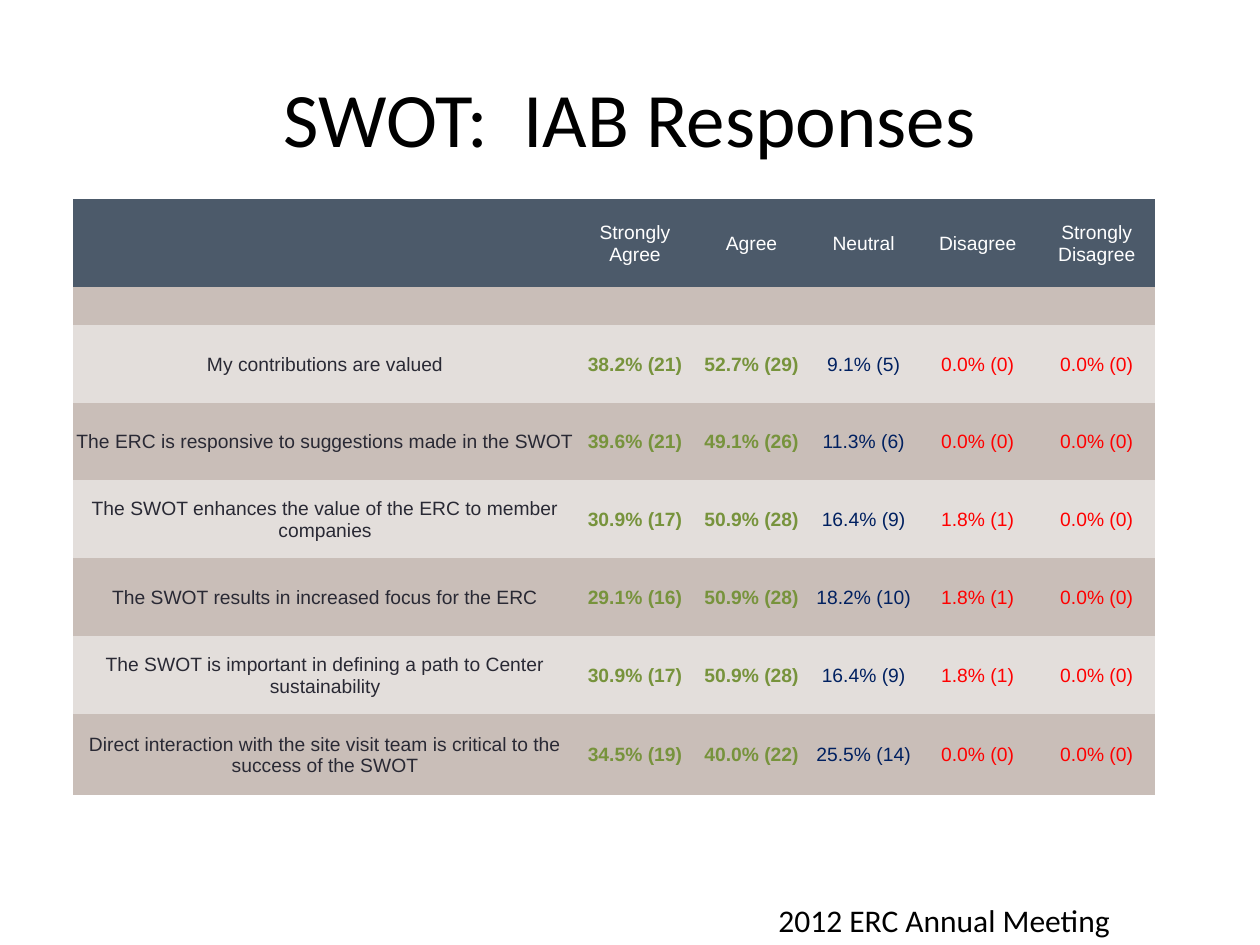
from dataclasses import dataclass

from pptx import Presentation
from pptx.dml.color import RGBColor
from pptx.enum.text import MSO_ANCHOR, MSO_AUTO_SIZE, PP_ALIGN
from pptx.util import Inches, Pt


@dataclass(frozen=True)
class Theme:
    heading_font: str = "Calibri"
    table_font: str = "Arial"
    title_size: int = 44
    footer_size: int = 18
    table_size: int = 11
    black: str = "000000"
    white: str = "FFFFFF"
    statement: str = "292934"
    agree: str = "77933C"
    neutral: str = "002060"
    disagree: str = "FF0000"
    header_fill: str = "4C5A6A"
    band_fills: tuple = ("C9BEB8", "E3DEDB")


THEME = Theme()
NO_GRID_STYLE = "{2D5ABB26-0587-4C30-8999-92F81FD0307C}"

COLUMN_WIDTHS = [4, 0.92, 0.93, 0.85, 0.96, 0.93]
ROW_HEIGHTS = [0.7, 0.3, 0.62, 0.61, 0.62, 0.62, 0.62, 0.64]
COLUMN_COLORS = [THEME.statement, THEME.agree, THEME.agree,
                 THEME.neutral, THEME.disagree, THEME.disagree]
RESPONSES = [
    ["", "Strongly Agree", "Agree", "Neutral", "Disagree", "Strongly Disagree"],
    [""] * 6,
    ["My contributions are valued",
     "38.2% (21)", "52.7% (29)", "9.1% (5)", "0.0% (0)", "0.0% (0)"],
    ["The ERC is responsive to suggestions made in the SWOT",
     "39.6% (21)", "49.1% (26)", "11.3% (6)", "0.0% (0)", "0.0% (0)"],
    ["The SWOT enhances the value of the ERC to member companies",
     "30.9% (17)", "50.9% (28)", "16.4% (9)", "1.8% (1)", "0.0% (0)"],
    ["The SWOT results in increased focus for the ERC",
     "29.1% (16)", "50.9% (28)", "18.2% (10)", "1.8% (1)", "0.0% (0)"],
    ["The SWOT is important in defining a path to Center sustainability",
     "30.9% (17)", "50.9% (28)", "16.4% (9)", "1.8% (1)", "0.0% (0)"],
    ["Direct interaction with the site visit team is critical to the success of the SWOT",
     "34.5% (19)", "40.0% (22)", "25.5% (14)", "0.0% (0)", "0.0% (0)"],
]


def write(frame, text, *, font, size, color, bold=False, align=PP_ALIGN.LEFT):
    para = frame.paragraphs[0]
    para.alignment = align
    if not text:
        # The end mark sets the line height of an empty paragraph.
        para._p.get_or_add_endParaRPr().set("sz", str(size * 100))
        return
    span = para.add_run()
    span.text = text
    span.font.name = font
    span.font.size = Pt(size)
    span.font.bold = bold
    span.font.color.rgb = RGBColor.from_string(color)


def add_title(page, text):
    title = page.shapes.title
    title.left, title.top = Inches(0.5), Inches(0.3)
    title.width, title.height = Inches(9), Inches(1.25)
    title.text_frame.vertical_anchor = MSO_ANCHOR.MIDDLE
    write(title.text_frame, text, font=THEME.heading_font,
          size=THEME.title_size, color=THEME.black, align=PP_ALIGN.CENTER)


def fill_cell(cell, text, fill, color, bold):
    cell.fill.solid()
    cell.fill.fore_color.rgb = RGBColor.from_string(fill)
    cell.vertical_anchor = MSO_ANCHOR.MIDDLE
    cell.margin_left = cell.margin_right = cell.margin_top = Inches(0.01)
    cell.margin_bottom = 0
    write(cell.text_frame, text, font=THEME.table_font, size=THEME.table_size,
          color=color, bold=bold, align=PP_ALIGN.CENTER)


def add_response_table(page):
    table = page.shapes.add_table(
        len(RESPONSES), len(COLUMN_WIDTHS), Inches(0.58), Inches(1.58),
        Inches(sum(COLUMN_WIDTHS)), Inches(sum(ROW_HEIGHTS))).table
    table.horz_banding = False
    table._tbl.tblPr[0].text = NO_GRID_STYLE
    for column, width in zip(table.columns, COLUMN_WIDTHS):
        column.width = Inches(width)
    for row, height in zip(table.rows, ROW_HEIGHTS):
        row.height = Inches(height)

    for row_index, texts in enumerate(RESPONSES):
        is_header = row_index == 0
        fill = THEME.header_fill if is_header else THEME.band_fills[(row_index - 1) % 2]
        for column_index, text in enumerate(texts):
            column_color = COLUMN_COLORS[column_index]
            color = THEME.white if is_header else column_color
            fill_cell(table.cell(row_index, column_index), text, fill, color,
                      bold=color == THEME.agree)


def add_footer(page, text):
    box = page.shapes.add_textbox(Inches(6.08), Inches(7.1), Inches(2.92), Inches(0.4))
    box.text_frame.word_wrap = False
    box.text_frame.auto_size = MSO_AUTO_SIZE.SHAPE_TO_FIT_TEXT
    write(box.text_frame, text, font=THEME.heading_font,
          size=THEME.footer_size, color=THEME.black)


def main():
    deck = Presentation()
    deck.slide_width, deck.slide_height = Inches(10), Inches(7.5)
    page = deck.slides.add_slide(deck.slide_layouts.get_by_name("Title Only"))
    add_title(page, "SWOT:  IAB Responses")
    add_response_table(page)
    add_footer(page, "2012 ERC Annual Meeting")
    deck.save("out.pptx")


if __name__ == "__main__":
    main()
